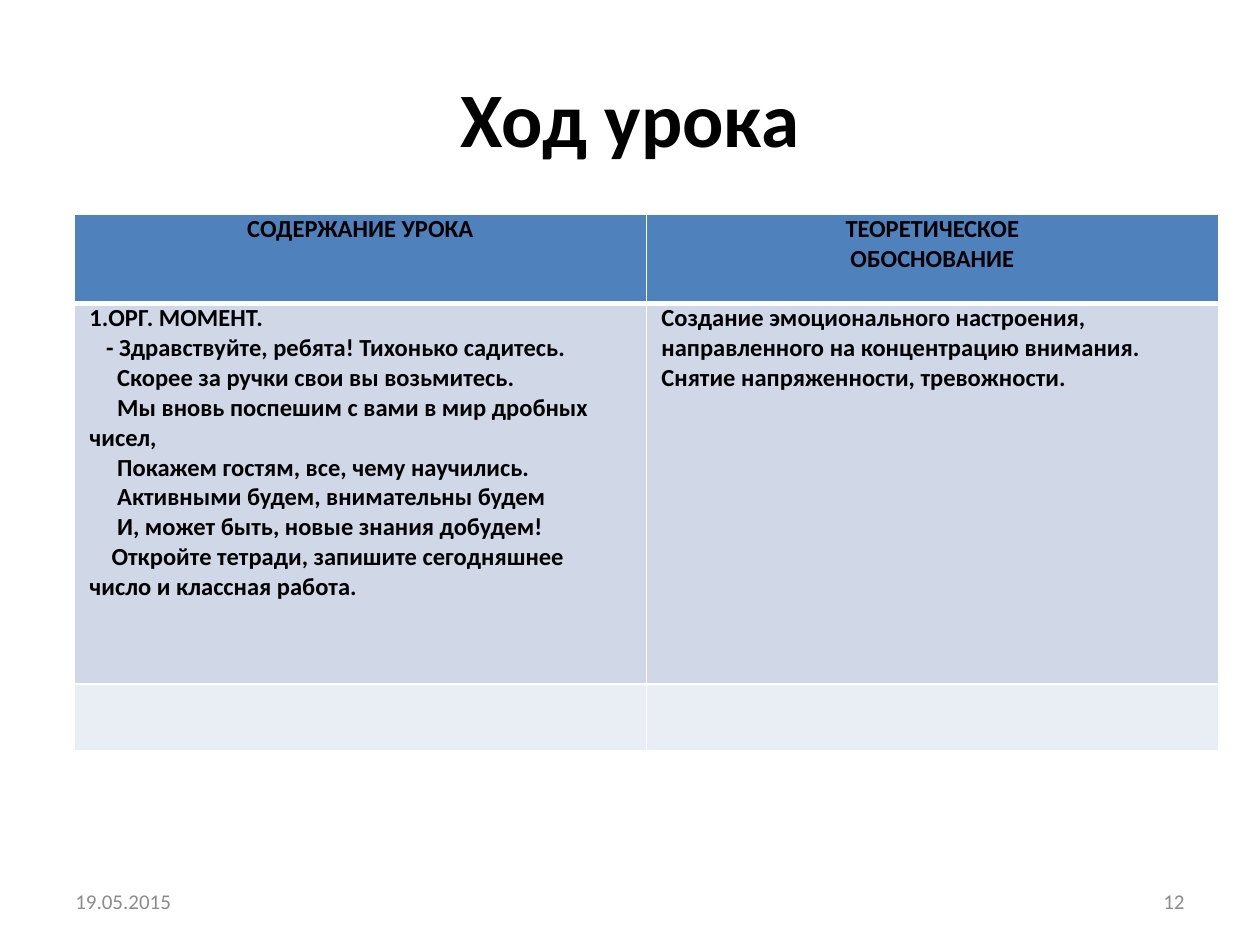
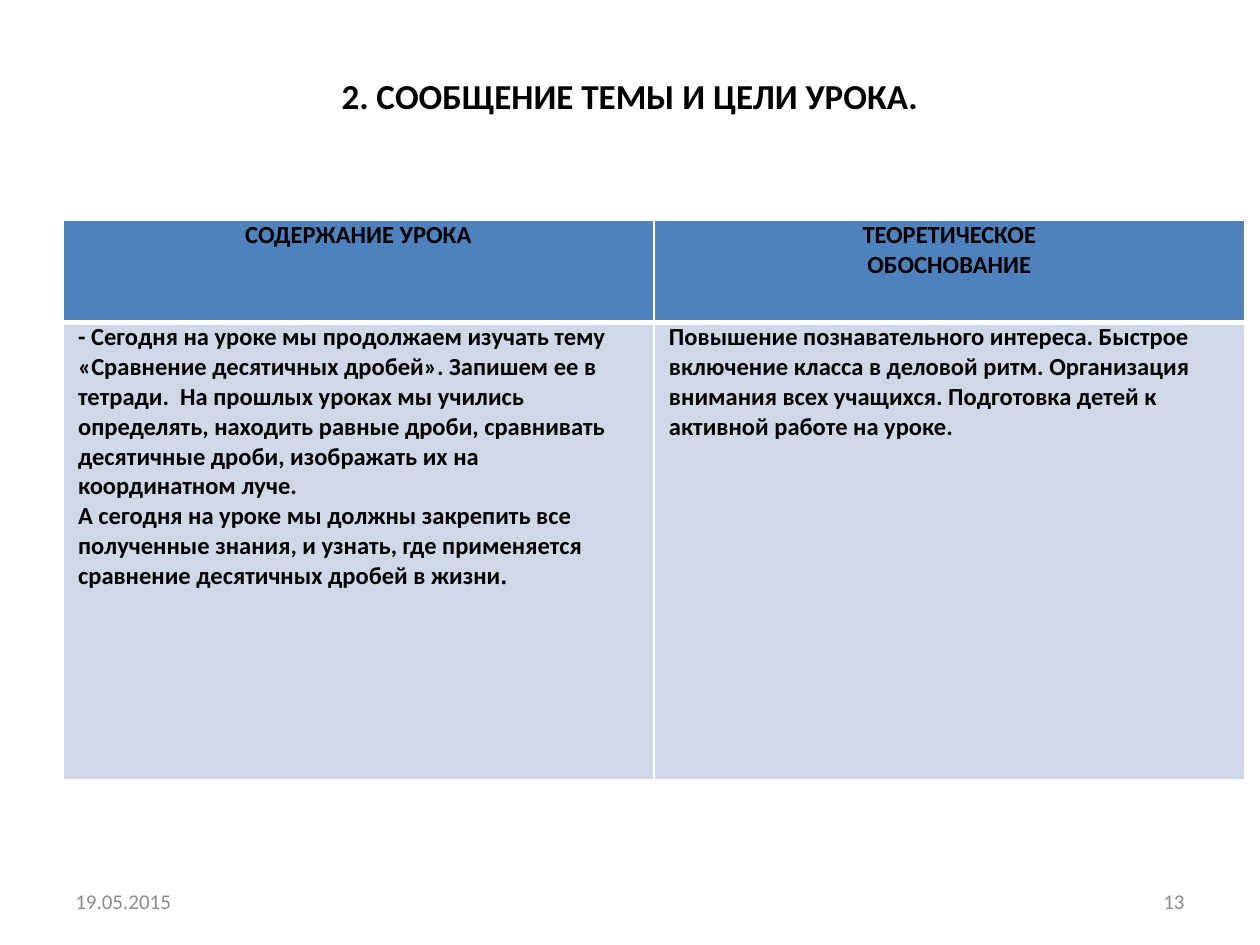
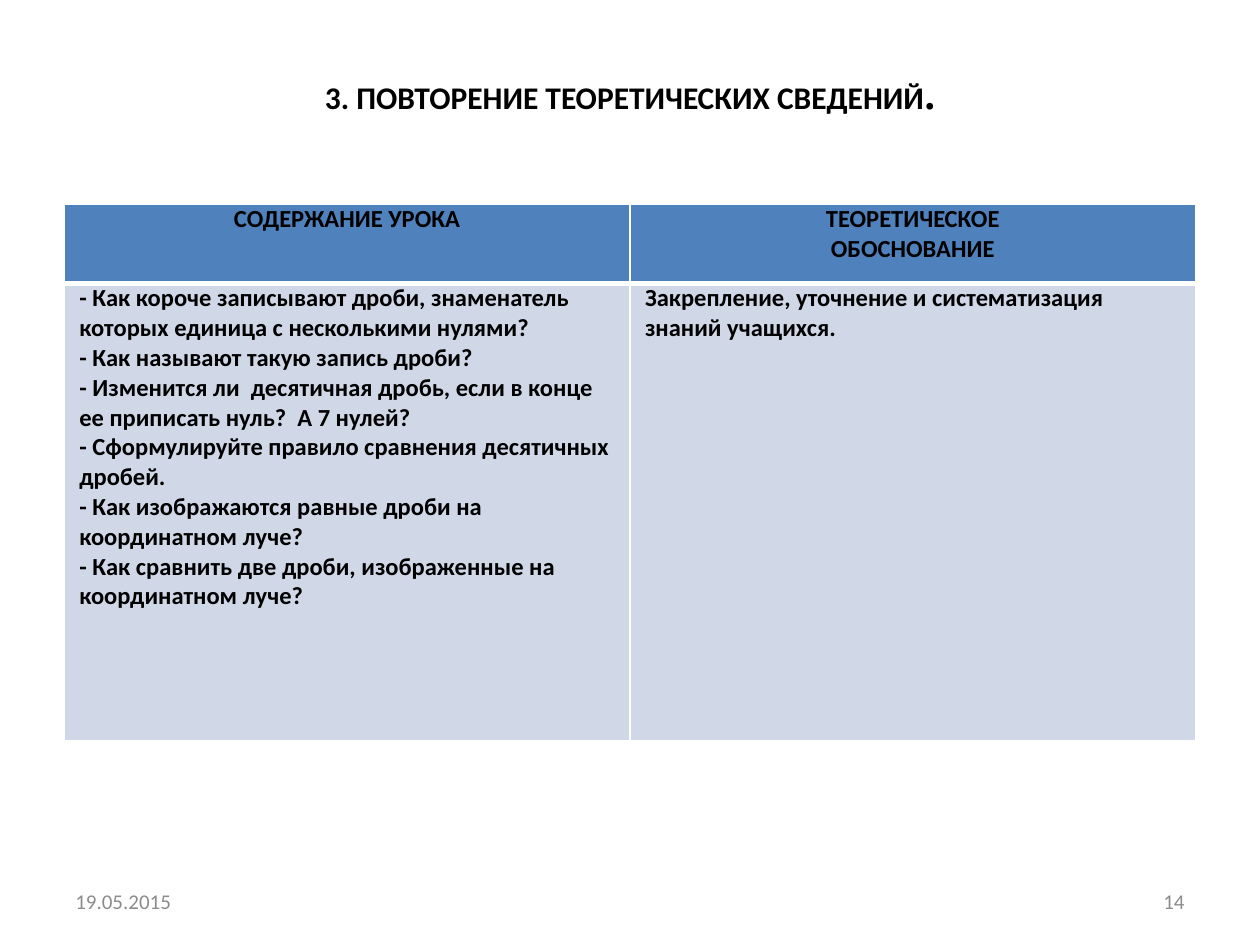
from pptx import Presentation
from pptx.dml.color import RGBColor
from pptx.enum.text import MSO_ANCHOR, PP_ALIGN
from pptx.oxml import parse_xml
from pptx.oxml.ns import nsdecls
from pptx.util import Inches, Pt

HEADER_FILL = "4F81BD"
BAND_FILLS = ["D0D8E8", "E9EDF4"]
BORDER = "FFFFFF"
TEXT_FORMAT = {"name": "Calibri", "size": Pt(14), "bold": True, "color": "000000"}
FOOTER_FORMAT = {"name": "Calibri", "size": Pt(12), "bold": False, "color": "8C8C8C"}
SERIF = {"name": "Times New Roman"}
SPACE = 0.044

TITLE_BOX = (0.5, 0.3, 9, 1.25)
FOOTER_BOX = (0.5, 6.95, 9, 0.4)
FOOTER_PART = 2.33
DATE = "19.05.2015"
HEADERS = [["СОДЕРЖАНИЕ УРОКА"], ["ТЕОРЕТИЧЕСКОЕ", "ОБОСНОВАНИЕ"]]

LESSONS = [
    {
        "number": 12,
        "title": [("Ход урока", {})],
        "title_size": 44,
        "title_lift": 0,
        "table_box": (0.59, 1.7, 9.08),
        "row_heights": [0.71, 3.02, 0.53],
        "rows": [
            [
                [
                    "1.ОРГ. МОМЕНТ.",
                    (3, "- Здравствуйте, ребята! Тихонько садитесь."),
                    (5, "Скорее за ручки свои вы возьмитесь."),
                    (5, "Мы вновь поспешим с вами в мир дробных чисел,"),
                    (5, "Покажем гостям, все, чему научились."),
                    (5, "Активными будем, внимательны будем"),
                    (5, "И, может быть, новые знания добудем!"),
                    (4, "Откройте тетради, запишите сегодняшнее число и классная работа."),
                ],
                ["Создание эмоционального настроения, направленного на концентрацию "
                 "внимания. Снятие напряженности, тревожности."],
            ],
            [[], []],
        ],
    },
    {
        "number": 13,
        "title": [("2. СООБЩЕНИЕ ТЕМЫ И ЦЕЛИ УРОКА.", {})],
        "title_size": 20,
        "title_lift": 0.33,
        "table_box": (0.5, 1.75, 9.38),
        "row_heights": [0.81, 3.63],
        "rows": [
            [
                [
                    "- Сегодня на уроке мы продолжаем изучать тему «Сравнение десятичных "
                    "дробей». Запишем ее в тетради.  На прошлых уроках мы учились определять, "
                    "находить равные дроби, сравнивать десятичные дроби, изображать их на "
                    "координатном луче.",
                    [("А сегодня на уроке мы должны закрепить все полученные знания, и узнать, "
                      "где применяется сравнение десятичных дробей в жизни", {}), (".", SERIF)],
                ],
                ["Повышение познавательного интереса. Быстрое включение класса в деловой ритм. "
                 "Организация внимания всех учащихся. Подготовка детей к активной работе на "
                 "уроке."],
            ],
        ],
    },
    {
        "number": 14,
        "title": [("3. ПОВТОРЕНИЕ ТЕОРЕТИЧЕСКИХ СВЕДЕНИЙ", {}),
                  (".", {**SERIF, "size": Pt(24)})],
        "title_size": 18,
        "title_lift": 0.38,
        "table_box": (0.51, 1.62, 8.98),
        "row_heights": [0.63, 3.63],
        "rows": [
            [
                [
                    "- Как короче записывают дроби, знаменатель которых единица с несколькими "
                    "нулями?",
                    "- Как называют такую запись дроби?",
                    "- Изменится ли  десятичная дробь, если в конце ее приписать нуль?  "
                    "А 7 нулей?",
                    "- Сформулируйте правило сравнения десятичных дробей.",
                    "- Как изображаются равные дроби на координатном луче?",
                    "- Как сравнить две дроби, изображенные на координатном луче?",
                ],
                ["Закрепление, уточнение и систематизация знаний учащихся."],
            ],
        ],
    },
]


def color(value):
    return RGBColor.from_string(value)


def add_spans(para, spans, style):
    for text, changes in spans:
        span = para.add_run()
        span.text = text
        for key, value in {**style, **changes}.items():
            if key == "color":
                span.font.color.rgb = color(value)
            else:
                setattr(span.font, key, value)


def write_paragraphs(frame, paragraphs, style, align):
    for index, content in enumerate(paragraphs):
        para = frame.add_paragraph() if index else frame.paragraphs[0]
        para.alignment = align
        if isinstance(content, tuple):
            spaces, content = content
            properties = para._p.get_or_add_pPr()
            properties.set("marL", "0")
            properties.set("indent", str(Inches(spaces * SPACE)))
        spans = [(content, {})] if isinstance(content, str) else content
        add_spans(para, spans, style)


def add_text(page, box, paragraphs, style, align, lift=0):
    frame = page.shapes.add_textbox(*map(Inches, box)).text_frame
    settings = {
        "word_wrap": True,
        "vertical_anchor": MSO_ANCHOR.MIDDLE,
        "margin_bottom": Inches(0.05 + lift),
    }
    for key, value in settings.items():
        setattr(frame, key, value)
    write_paragraphs(frame, paragraphs, style, align)


def set_borders(cell, widths):
    properties = cell._tc.get_or_add_tcPr()
    for index, (side, width) in enumerate(widths.items()):
        line = parse_xml(
            f'<a:ln{side} {nsdecls("a")} w="{Pt(width)}"><a:solidFill>'
            f'<a:srgbClr val="{BORDER}"/></a:solidFill></a:ln{side}>'
        )
        properties.insert(index, line)


def format_cell(cell, row, paragraphs):
    is_header = row == 0
    margin = Inches(0.07 if is_header else 0.12)
    margins = {
        "margin_left": margin,
        "margin_right": margin,
        "margin_top": 0,
        "margin_bottom": 0,
    }
    for key, value in margins.items():
        setattr(cell, key, value)
    cell.fill.solid()
    fill = HEADER_FILL if is_header else BAND_FILLS[(row - 1) % 2]
    cell.fill.fore_color.rgb = color(fill)
    set_borders(cell, {"L": 1, "R": 1, "T": 3 if row == 1 else 1, "B": 3 if is_header else 1})
    align = PP_ALIGN.CENTER if is_header else PP_ALIGN.LEFT
    write_paragraphs(cell.text_frame, paragraphs, TEXT_FORMAT, align)


def add_lesson_table(page, box, row_heights, rows):
    left, top, width = box
    bounds = map(Inches, (left, top, width, sum(row_heights)))
    table = page.shapes.add_table(len(row_heights), len(HEADERS), *bounds).table
    for column in table.columns:
        column.width = Inches(width / len(HEADERS))
    for row, (height, contents) in enumerate(zip(row_heights, [HEADERS] + rows)):
        table.rows[row].height = Inches(height)
        for column, paragraphs in enumerate(contents):
            format_cell(table.cell(row, column), row, paragraphs)


def add_footer(page, box, number):
    left, top, width, height = box
    right_part = left + width - FOOTER_PART
    add_text(page, (left, top, FOOTER_PART, height), [DATE], FOOTER_FORMAT, PP_ALIGN.LEFT)
    add_text(page, (right_part, top, FOOTER_PART, height), [str(number)],
             FOOTER_FORMAT, PP_ALIGN.RIGHT)


def add_lesson_page(deck, lesson):
    page = deck.slides.add_slide(deck.slide_layouts[6])
    title_format = {**TEXT_FORMAT, "size": Pt(lesson["title_size"])}
    add_text(page, TITLE_BOX, [lesson["title"]], title_format, PP_ALIGN.CENTER,
             lesson["title_lift"])
    add_lesson_table(page, lesson["table_box"], lesson["row_heights"], lesson["rows"])
    add_footer(page, FOOTER_BOX, lesson["number"])


def main():
    deck = Presentation()
    deck.slide_width = Inches(10)
    deck.slide_height = Inches(7.5)
    for lesson in LESSONS:
        add_lesson_page(deck, lesson)
    deck.save("out.pptx")


if __name__ == "__main__":
    main()
